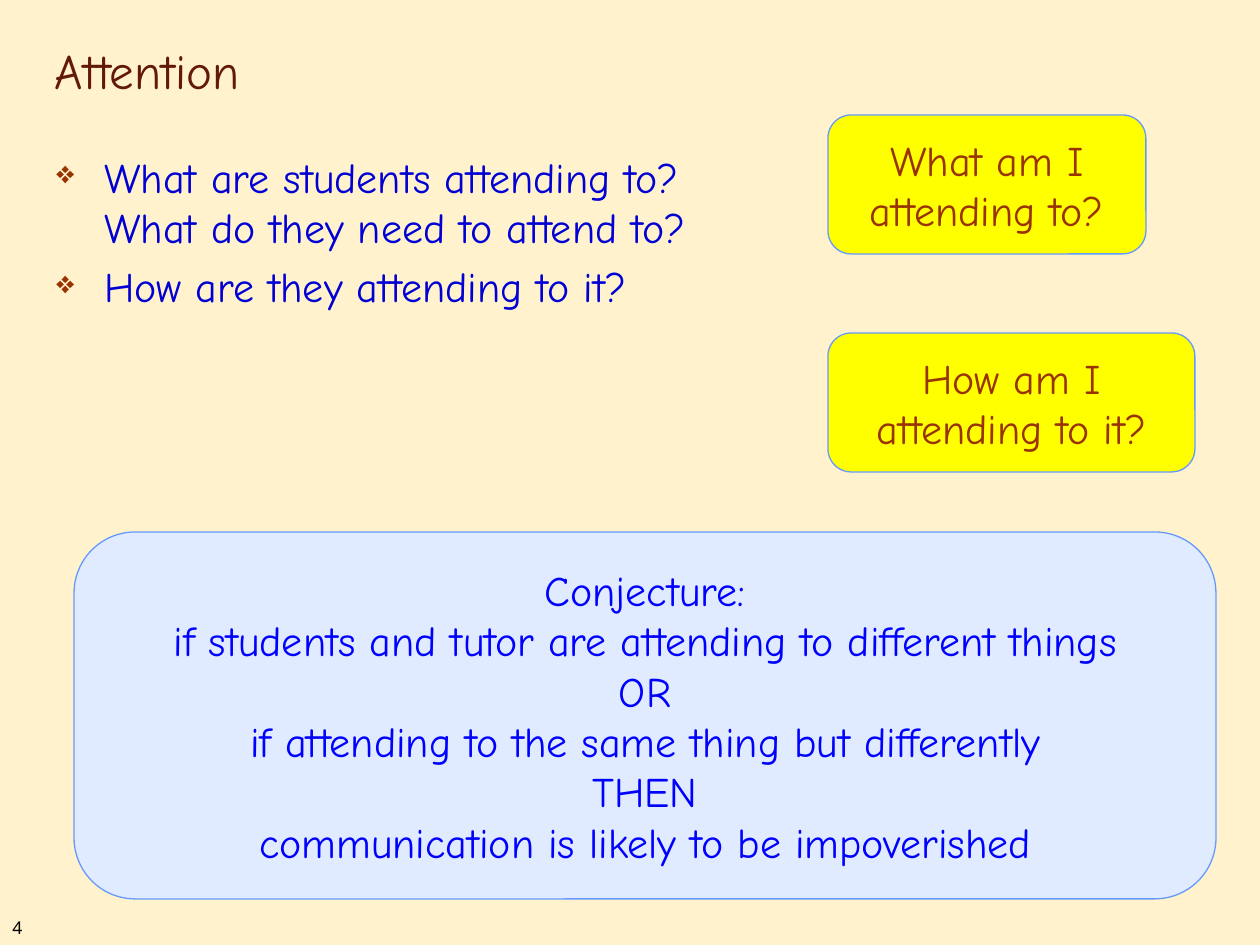
from lxml.etree import SubElement
from pptx import Presentation
from pptx.dml.color import RGBColor
from pptx.enum.shapes import MSO_SHAPE as SHAPE
from pptx.enum.text import MSO_ANCHOR as ANCHOR, MSO_AUTO_SIZE as AUTO, PP_ALIGN as ALIGN
from pptx.oxml.ns import qn
from pptx.util import Emu, Pt

SCALE = 914400 / 126
FONT = "Comic Neue"


def px(n):
    return Emu(round(n * SCALE))


def rgb(value):
    return RGBColor.from_string(value)


def place(sp, box):
    sp.left, sp.top, sp.width, sp.height = map(px, box)


def write(sp, paragraphs, color, size=24, font=FONT, align=ALIGN.LEFT, anchor=ANCHOR.TOP):
    tf = sp.text_frame
    tf.word_wrap = True
    tf.auto_size = AUTO.NONE
    tf.vertical_anchor = anchor
    for i, lines in enumerate(paragraphs):
        p = tf.add_paragraph() if i else tf.paragraphs[0]
        p.alignment = align
        for j, line in enumerate(lines.split("\n")):
            if j:
                p.add_line_break()
            r = p.add_run()
            r.text = line
            r.font.size = Pt(size)
            r.font.name = font
            r.font.color.rgb = rgb(color)
    return tf


def add_text(slide, box, paragraphs, color, **style):
    sp = slide.shapes.add_textbox(*map(px, box))
    return write(sp, paragraphs, color, **style)


def add_bullets(slide, box, items, color, bullet_color):
    for p in add_text(slide, box, items, color).paragraphs:
        p.space_before = Pt(4.8)
        pPr = p._p.get_or_add_pPr()
        pPr.set("marL", str(px(48)))
        pPr.set("indent", str(px(-48)))
        buClr = SubElement(pPr, qn("a:buClr"))
        SubElement(buClr, qn("a:srgbClr"), val=bullet_color)
        SubElement(pPr, qn("a:buSzPct"), val="75000")
        SubElement(pPr, qn("a:buChar"), char="❖")


def add_card(slide, box, paragraphs, fill, color):
    sp = slide.shapes.add_shape(SHAPE.ROUNDED_RECTANGLE, *map(px, box))
    sp.shadow.inherit = False
    sp.fill.solid()
    sp.fill.fore_color.rgb = rgb(fill)
    sp.line.color.rgb = rgb("6699FF")
    sp.line.width = Pt(0.75)
    write(sp, paragraphs, color, align=ALIGN.CENTER, anchor=ANCHOR.MIDDLE)


def main():
    prs = Presentation()
    prs.slide_width, prs.slide_height = px(1260), px(945)
    slide = prs.slides.add_slide(prs.slide_layouts[5])
    slide.background.fill.solid()
    slide.background.fill.fore_color.rgb = rgb("FFF2CC")

    title = slide.shapes.title
    place(title, (42, 21, 1071, 85))
    write(title, ["Attention"], "631908", size=28, anchor=ANCHOR.BOTTOM)
    add_text(slide, (0, 911, 54, 34), ["4"], "000000", size=10, font="Noto Sans")
    add_bullets(slide, (44, 145, 1160, 198), [
        "What are students attending to?\nWhat do they need to attend to?",
        "How are they attending to it?",
    ], "0000D4", "993300")

    add_card(slide, (828, 115, 318, 139), ["What am I attending to?"], "FFFF00", "993300")
    add_card(slide, (828, 333, 367, 139), ["How am I attending to it?"], "FFFF00", "993300")
    add_card(slide, (74, 532, 1142, 367), [
        "Conjecture:",
        "if students and tutor are attending to different things",
        "OR",
        "if attending to the same thing but differently\nTHEN\n"
        "communication is likely to be impoverished",
    ], "E0EBFF", "0000FF")
    prs.save("out.pptx")


if __name__ == "__main__":
    main()
